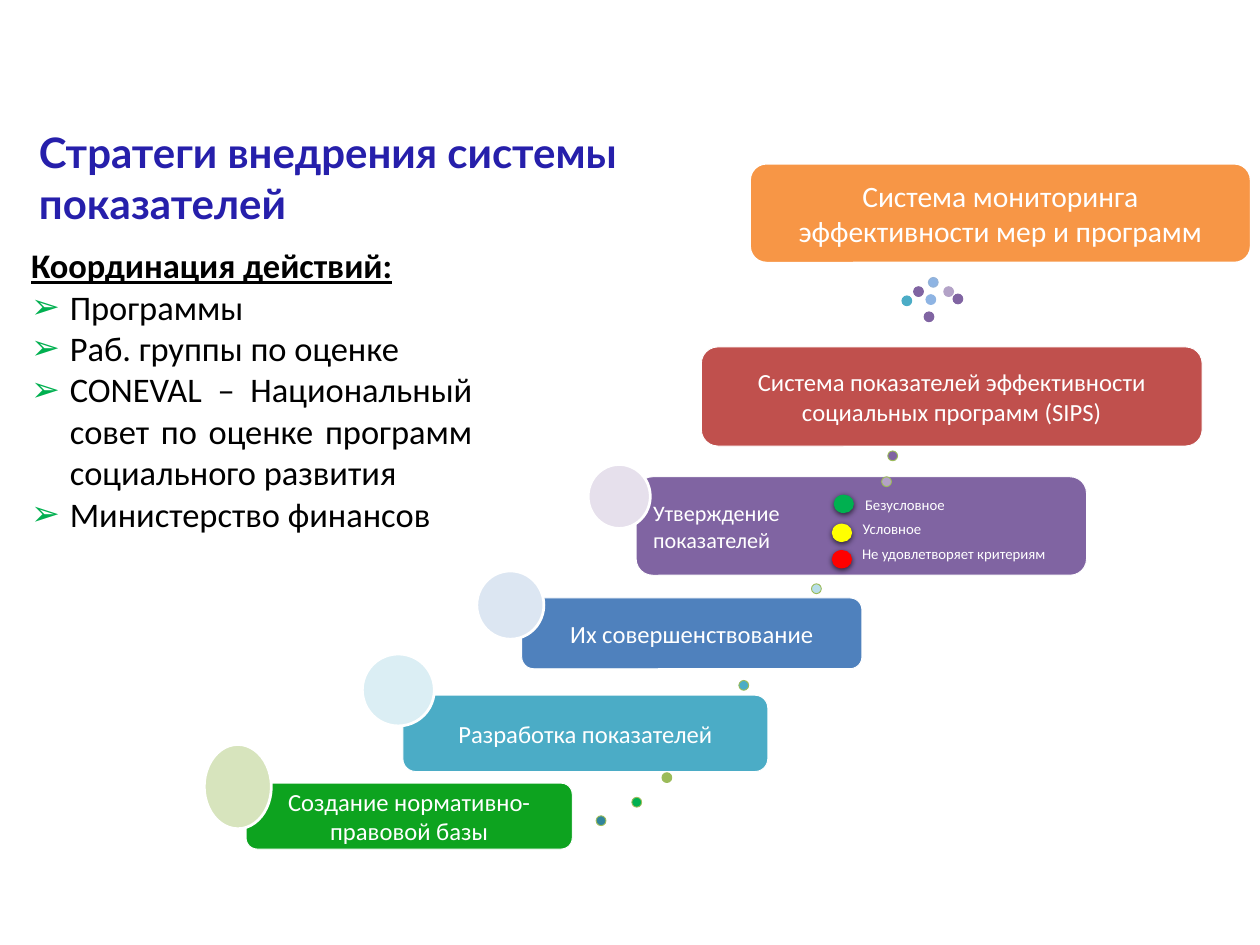
from typing import NamedTuple

from lxml import etree
from pptx import Presentation
from pptx.dml.color import RGBColor
from pptx.enum.shapes import MSO_SHAPE
from pptx.enum.text import MSO_ANCHOR, MSO_AUTO_SIZE, PP_ALIGN
from pptx.oxml.ns import qn
from pptx.util import Pt

ROUNDED, OVAL = MSO_SHAPE.ROUNDED_RECTANGLE, MSO_SHAPE.OVAL
TOP, MIDDLE = MSO_ANCHOR.TOP, MSO_ANCHOR.MIDDLE
NO_AUTOFIT = MSO_AUTO_SIZE.NONE
LEFT, CENTER, JUSTIFY = PP_ALIGN.LEFT, PP_ALIGN.CENTER, PP_ALIGN.JUSTIFY

WHITE = RGBColor(0xFF, 0xFF, 0xFF)
BLACK = RGBColor(0x00, 0x00, 0x00)
INDIGO = RGBColor(0x26, 0x1F, 0xAB)
GREEN = RGBColor(0x0D, 0xA3, 0x1F)
EMERALD = RGBColor(0x00, 0xB0, 0x50)
OLIVE = RGBColor(0x9B, 0xBB, 0x59)
PALE_OLIVE = RGBColor(0xD7, 0xE4, 0xBD)
DARK_TEAL = RGBColor(0x31, 0x85, 0x9C)
TEAL = RGBColor(0x4B, 0xAC, 0xC6)
LIGHT_TEAL = RGBColor(0xB7, 0xDE, 0xE8)
PALE_TEAL = RGBColor(0xDB, 0xEE, 0xF4)
BLUE = RGBColor(0x4F, 0x81, 0xBD)
SKY = RGBColor(0x8E, 0xB4, 0xE3)
SKY_EDGE = RGBColor(0x95, 0xB3, 0xD7)
PALE_BLUE = RGBColor(0xDC, 0xE6, 0xF2)
PURPLE = RGBColor(0x80, 0x64, 0xA2)
LILAC = RGBColor(0xB3, 0xA2, 0xC7)
PALE_PURPLE = RGBColor(0xE6, 0xE0, 0xEC)
CRIMSON = RGBColor(0xC0, 0x50, 0x4D)
ORANGE = RGBColor(0xF7, 0x96, 0x46)
YELLOW = RGBColor(0xFF, 0xFF, 0x00)
RED = RGBColor(0xFF, 0x00, 0x00)

TITLE = "Стратеги внедрения системы показателей"
COORDINATION = "Координация действий:"
COORDINATORS = [
    "Программы",
    "Раб. группы по оценке",
    "CONEVAL – Национальный совет по оценке программ социального развития",
    "Министерство финансов",
]
STEPS = [
    ("Создание нормативно-правовой базы", (34, 503.5, 265, 53.5), GREEN, 20, CENTER, 0.75),
    ("Разработка показателей", (161.5, 432, 296.5, 62), TEAL, 20, CENTER, 0.75),
    ("Их совершенствование", (258, 353, 276.5, 57.5), BLUE, 20, CENTER, 0.75),
    ("Утверждение\nпоказателей", (351, 254.5, 366, 80), PURPLE, 18, LEFT, 0.75),
    ("Система показателей эффективности социальных программ (SIPS)",
     (404, 149, 407, 80.5), CRIMSON, 20, CENTER, 0.75),
    ("Система мониторинга эффективности мер и программ",
     (443.5, 0, 407, 80.5), ORANGE, 24, CENTER, 1.5),
]
BUBBLES = [
    ((0, 472, 54.5, 68.5), PALE_OLIVE),
    ((128.5, 398.5, 58.5, 58.5), PALE_TEAL),
    ((221.5, 331, 54.5, 55.5), PALE_BLUE),
    ((312, 244.5, 50.5, 52), PALE_PURPLE),
]
TRAIL = [
    (318.5, 530, DARK_TEAL, OLIVE), (347.5, 515, EMERALD, OLIVE),
    (372, 495, OLIVE, OLIVE), (434.5, 420, TEAL, OLIVE),
    (493.5, 341.5, LIGHT_TEAL, OLIVE), (550.5, 254.5, LILAC, OLIVE),
    (555.5, 233.5, PURPLE, OLIVE),
]
CLUSTER = [
    (18, 28.5, PURPLE, PURPLE), (9.5, 8, PURPLE, PURPLE),
    (0, 15.5, TEAL, TEAL), (19.5, 14.5, SKY, SKY),
    (34, 8, LILAC, LILAC), (21.5, 0.5, SKY, SKY_EDGE),
    (41.5, 14, PURPLE, PURPLE),
]
VERDICTS = [
    ("Безусловное", EMERALD, (1.5, 3), (20, 0, 183), None),
    ("Условное", YELLOW, (0, 26.5), (18, 20, 162), None),
    ("Не удовлетворяет критериям", RED, (0, 48), (17.5, 41, 204), Pt(14)),
]


class Box(NamedTuple):
    """Area of the slide in points."""
    left: float
    top: float
    width: float
    height: float

    def inner(self, left, top, width, height):
        """Return a box placed relative to this one."""
        return Box(self.left + left, self.top + top, width, height)

    def lengths(self):
        """Return the four measures as slide lengths."""
        return [Pt(measure) for measure in self]


def set_font(paragraph, face, size, color, bold=False, underline=False):
    """Format a whole paragraph."""
    font = paragraph.font
    font.name, font.size, font.bold = face, Pt(size), bold
    font.underline = underline
    font.color.rgb = color


def place(placeholder, box):
    """Move a placeholder into its box and fix its text settings."""
    placeholder.left, placeholder.top, placeholder.width, placeholder.height = box.lengths()
    frame = placeholder.text_frame
    frame.word_wrap, frame.auto_size, frame.vertical_anchor = True, NO_AUTOFIT, TOP
    return frame


def set_bullet(paragraph, indent):
    """Give a paragraph a green arrow bullet, or none without an indent."""
    properties = paragraph._p.get_or_add_pPr()
    properties.set("marL", str(Pt(indent)))
    properties.set("indent", str(Pt(-indent)))
    if not indent:
        etree.SubElement(properties, qn("a:buNone"))
        return
    color = etree.SubElement(properties, qn("a:buClr"))
    etree.SubElement(color, qn("a:srgbClr"), val=str(EMERALD))
    etree.SubElement(properties, qn("a:buChar"), char="➢")


def add_figure(slide, kind, box, fill, edge=None, edge_width=0.75):
    """Add a flat filled shape."""
    figure = slide.shapes.add_shape(kind, *box.lengths())
    figure.shadow.inherit = False
    figure.fill.solid()
    figure.fill.fore_color.rgb = fill
    if edge is None:
        figure.line.fill.background()
    else:
        figure.line.color.rgb = edge
        figure.line.width = Pt(edge_width)
    return figure


def cast_shadow(figure):
    """Cast a soft shadow straight down."""
    effects = figure._element.spPr.find(qn("a:effectLst"))
    shadow = etree.SubElement(effects, qn("a:outerShdw"), blurRad=str(Pt(4.5)),
                              dist=str(Pt(1.5)), dir="5400000", rotWithShape="0")
    color = etree.SubElement(shadow, qn("a:srgbClr"), val=str(BLACK))
    etree.SubElement(color, qn("a:alpha"), val="63000")


def add_title(slide, box):
    """Write the slide title."""
    frame = place(slide.shapes.title, box)
    frame.text = TITLE
    heading = frame.paragraphs[0]
    heading.alignment = LEFT
    set_font(heading, "Lato", 34.1, INDIGO, bold=True)


def add_coordination(slide, box):
    """Write the underlined heading and the list of coordinators."""
    frame = place(slide.placeholders[1], box)
    frame.text = "\n".join([COORDINATION, *COORDINATORS])
    for index, entry in enumerate(frame.paragraphs):
        is_heading = index == 0
        entry.alignment = JUSTIFY
        entry.space_before = Pt(0)
        set_bullet(entry, 0 if is_heading else 31.5)
        set_font(entry, "Calibri", 28, BLACK, is_heading, is_heading)


def add_staircase(slide, box):
    """Draw the rising steps with their corner bubbles."""
    for text, area, fill, size, alignment, edge_width in STEPS:
        step = add_figure(slide, ROUNDED, box.inner(*area), fill, WHITE, edge_width)
        frame = step.text_frame
        frame.word_wrap, frame.vertical_anchor = True, MIDDLE
        frame.margin_left = frame.margin_right = Pt(10)
        frame.margin_top = frame.margin_bottom = Pt(5)
        frame.text = text
        for line in frame.paragraphs:
            line.alignment = alignment
            set_font(line, "Calibri", size, WHITE)
    for area, fill in BUBBLES:
        add_figure(slide, OVAL, box.inner(*area), fill, WHITE, 2.25)


def add_dots(slide, box, dots):
    """Scatter small dots over the box."""
    for left, top, fill, edge in dots:
        add_figure(slide, OVAL, box.inner(left, top, 8, 8), fill, edge)


def add_verdicts(slide, box):
    """Draw the traffic lights with their labels."""
    for text, color, light_spot, (left, top, width), spacing in VERDICTS:
        cast_shadow(add_figure(slide, OVAL, box.inner(*light_spot, 16.5, 15), color))
        label = slide.shapes.add_textbox(*box.inner(left, top, width, 21.5).lengths())
        label.text_frame.word_wrap = True
        label.text_frame.text = text
        verdict = label.text_frame.paragraphs[0]
        verdict.line_spacing = spacing
        set_font(verdict, "Calibri", 12, WHITE)


def main():
    """Build and save the slide."""
    deck = Presentation()
    deck.slide_width, deck.slide_height = Pt(1024), Pt(768)
    slide = deck.slides.add_slide(deck.slide_layouts[1])
    staircase = Box(166, 133, 851, 557)
    add_title(slide, Box(24.5, 99.5, 600, 90))
    add_coordination(slide, Box(18, 195, 373, 245))
    add_staircase(slide, staircase)
    add_dots(slide, staircase, TRAIL)
    add_dots(slide, Box(733, 225, 50, 37), CLUSTER)
    add_verdicts(slide, Box(676, 399, 222, 63))
    deck.save("out.pptx")


if __name__ == "__main__":
    main()
